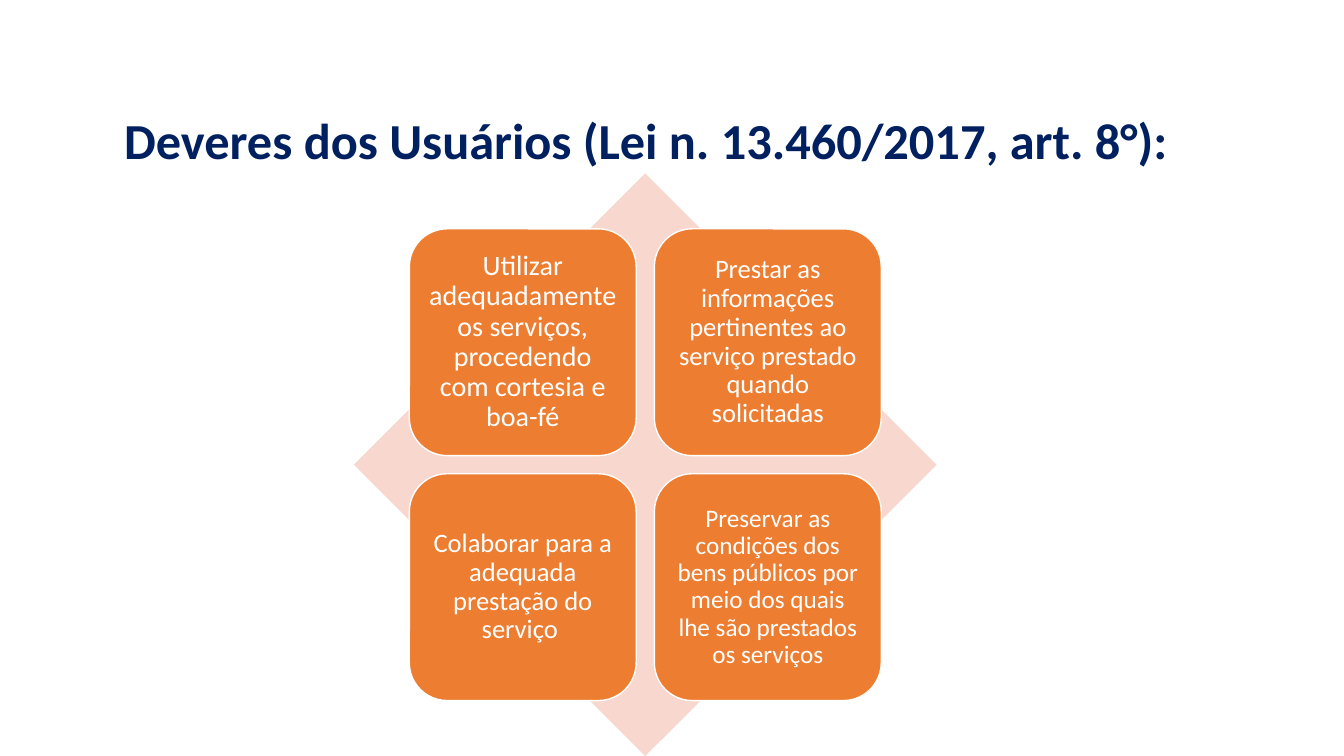
from dataclasses import dataclass

from pptx import Presentation
from pptx.dml.color import RGBColor
from pptx.enum.shapes import MSO_SHAPE
from pptx.enum.text import MSO_ANCHOR, PP_ALIGN
from pptx.util import Inches, Pt


@dataclass(frozen=True)
class Theme:
    """Colours, font and type sizes of the slide."""
    font: str = "Calibri"
    navy: RGBColor = RGBColor(0x00, 0x20, 0x60)
    orange: RGBColor = RGBColor(0xED, 0x7D, 0x31)
    blush: RGBColor = RGBColor(0xF8, 0xD7, 0xCE)
    white: RGBColor = RGBColor(0xFF, 0xFF, 0xFF)
    title_size: int = 36
    large: int = 20
    medium: int = 19
    small: int = 18


class MatrixSlide:
    """Builds a titled matrix of cards over a diamond."""

    left, top, diamond_size = 3.51, 1.72, 5.78
    card_size, gap = 2.25, 0.18

    def __init__(self, slide, theme):
        """Keep the current slide and its theme."""
        self.slide = slide
        self.theme = theme

    def set_text(self, shape, text, size, color, alignment, bold=False):
        """Put one formatted paragraph in a shape and return it."""
        shape.text_frame.word_wrap = True
        paragraph = shape.text_frame.paragraphs[0]
        paragraph.text = text
        paragraph.alignment = alignment
        paragraph.font.name = self.theme.font
        paragraph.font.size = Pt(size)
        paragraph.font.bold = bold
        paragraph.font.color.rgb = color
        return paragraph

    def title(self, text):
        """Move and fill the title placeholder."""
        title = self.slide.shapes.title
        title.left, title.top = Inches(1.13), Inches(1.03)
        title.width, title.height = Inches(11.07), Inches(0.71)
        title.text_frame.vertical_anchor = MSO_ANCHOR.TOP
        paragraph = self.set_text(title, text, self.theme.title_size, self.theme.navy,
                                  PP_ALIGN.LEFT, bold=True)
        paragraph.line_spacing = 1.0

    def square(self, preset, left, top, size, color):
        """Add a filled preset shape of equal width and height."""
        shape = self.slide.shapes.add_shape(
            preset, Inches(left), Inches(top), Inches(size), Inches(size))
        shape.shadow.inherit = False
        shape.fill.solid()
        shape.fill.fore_color.rgb = color
        shape.line.fill.background()
        return shape

    def diamond(self):
        """Add the diamond behind the cards."""
        self.square(MSO_SHAPE.DIAMOND, self.left, self.top,
                    self.diamond_size, self.theme.blush)

    def card(self, column, row, text, size):
        """Add a rounded card at a column and row of the matrix."""
        pitch = self.card_size + self.gap
        margin = (self.diamond_size - pitch - self.card_size) / 2
        card = self.square(MSO_SHAPE.ROUNDED_RECTANGLE,
                           self.left + margin + column * pitch,
                           self.top + margin + row * pitch,
                           self.card_size, self.theme.orange)
        card.line.color.rgb = self.theme.white
        card.line.width = Pt(1)
        frame = card.text_frame
        frame.margin_left = frame.margin_right = Inches(0.08)
        frame.margin_top = frame.margin_bottom = Inches(0.08)
        frame.vertical_anchor = MSO_ANCHOR.MIDDLE
        paragraph = self.set_text(card, text, size, self.theme.white, PP_ALIGN.CENTER)
        paragraph.line_spacing = 0.9


def main():
    """Build and save the presentation."""
    presentation = Presentation()
    presentation.slide_width, presentation.slide_height = Inches(13.33), Inches(7.5)
    theme = Theme()
    matrix = MatrixSlide(
        presentation.slides.add_slide(presentation.slide_layouts[5]), theme)
    matrix.title("Deveres dos Usuários (Lei n. 13.460/2017, art. 8°):")
    matrix.diamond()
    duties = [
        ("Utilizar adequadamente os serviços, procedendo com cortesia e boa-fé",
         theme.large),
        ("Prestar as informações pertinentes ao serviço prestado quando solicitadas",
         theme.medium),
        ("Colaborar para a adequada prestação do serviço ", theme.medium),
        ("Preservar as condições dos bens públicos por meio dos quais lhe são "
         "prestados os serviços", theme.small),
    ]
    for index, (text, size) in enumerate(duties):
        row, column = divmod(index, 2)
        matrix.card(column, row, text, size)
    presentation.save("out.pptx")


if __name__ == "__main__":
    main()
